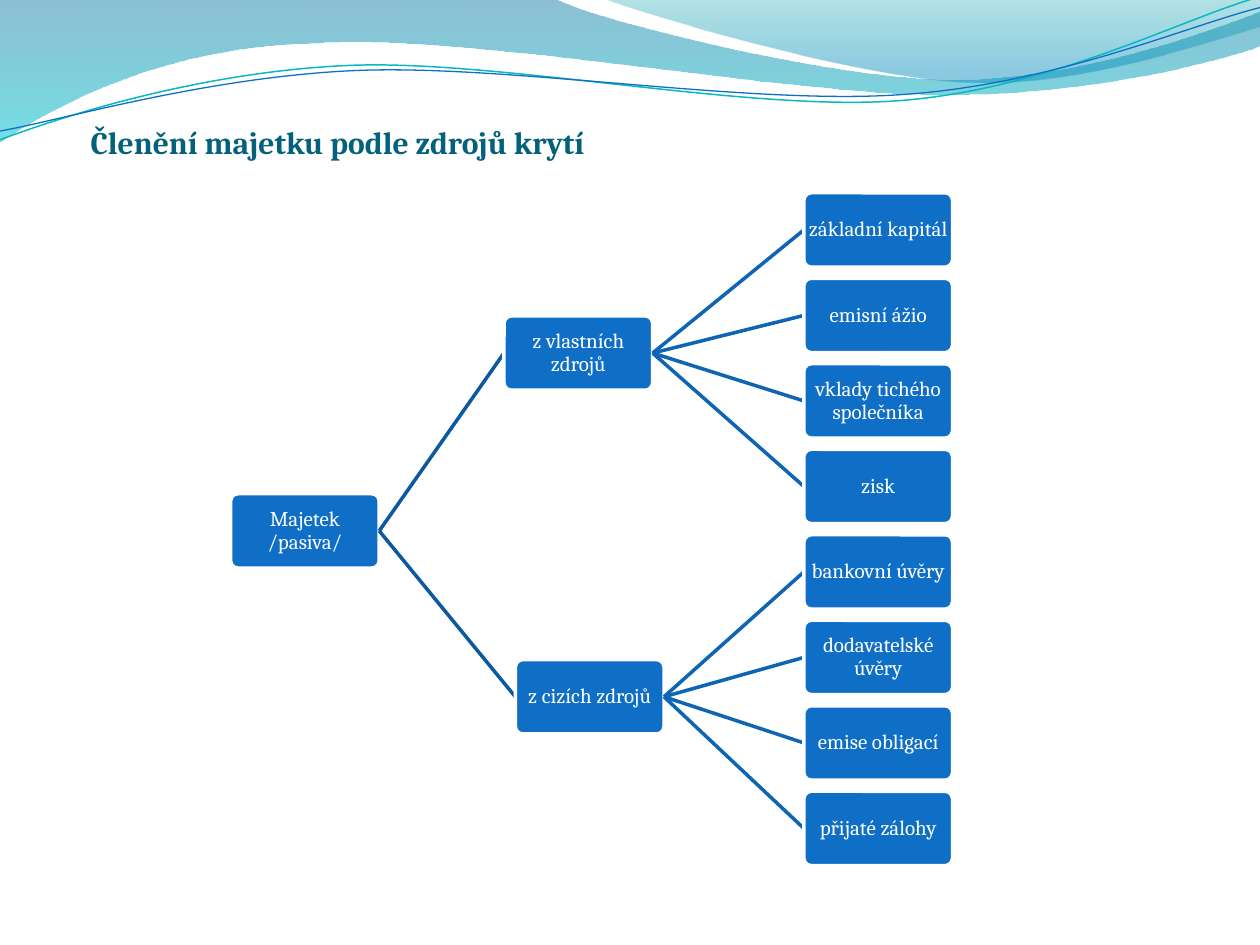
from pptx import Presentation
from pptx.dml.color import RGBColor
from pptx.enum.shapes import MSO_CONNECTOR, MSO_SHAPE
from pptx.enum.text import MSO_ANCHOR, PP_ALIGN
from pptx.oxml.ns import qn
from pptx.util import Inches, Pt
from lxml import etree

ROUND = MSO_SHAPE.ROUNDED_RECTANGLE
LINE = MSO_CONNECTOR.STRAIGHT
LEFT, MID = PP_ALIGN.LEFT, PP_ALIGN.CENTER

WHITE = RGBColor(0xFF, 0xFF, 0xFF)
BLUE = RGBColor(0x0F, 0x6F, 0xC6)
DEEP = RGBColor(0x0C, 0x59, 0x9F)
NAVY = RGBColor(0x0E, 0x65, 0xB4)
TITLE = RGBColor(0x04, 0x61, 0x7B)
AQUA = RGBColor(0x0A, 0xB8, 0xBF)
STEEL = RGBColor(0x00, 0x74, 0xA1)
CYAN = RGBColor(0x00, 0xC6, 0xCF)
TEAL = RGBColor(0x00, 0xA1, 0xA9)
SKY = RGBColor(0x00, 0x8B, 0xBF)

TOP, LAST = 1.53, 6.28  # tops of the first and the last row of the tree
ROW = (LAST - TOP) / 7
WIDE, HIGH = 1.18, 0.59

prs = Presentation()
prs.slide_width, prs.slide_height = Inches(10), Inches(7.5)
slide = prs.slides.add_slide(prs.slide_layouts[6])
shapes = slide.shapes


def write(frame, text, size=12, color=WHITE, bold=False, align=MID, space=0.9):
    para = frame.paragraphs[0]
    para.alignment, para.line_spacing = align, space
    run = para.add_run()
    run.text = text
    font = run.font
    font.name, font.size, font.bold = "Cambria", Pt(size), bold
    font.color.rgb = color


def trace(start, parts, close):
    """Draw an outline; a part is a line end (x, y) or a cubic curve (six numbers)."""
    pen = shapes.build_freeform(Inches(start[0]), Inches(start[1]))
    for part in parts:
        dots = zip(part[::2], part[1::2])
        pen.add_line_segments([(Inches(x), Inches(y)) for x, y in dots], close=False)
    if close:
        pen.add_line_segments([], close=True)
    shape = pen.convert_to_shape()
    shape.shadow.inherit = False
    # Merge the three points of each curve into one cubic segment
    legs = iter(list(shape.element.iter(qn("a:lnTo"))))
    for part in parts:
        first = next(legs)
        if len(part) == 6:
            curve = etree.Element(qn("a:cubicBezTo"))
            first.addprevious(curve)
            for leg in (first, next(legs), next(legs)):
                curve.append(leg[0])
                leg.getparent().remove(leg)
    return shape


# Header bands: start, parts, gradient stops (place, colour, opacity)
bands = [
    ((0, 0), [(4.4, -0.01), (4.76, 0.17, 6.64, 0.63, 7.58, 0.63),
              (8.53, 0.63, 9.58, 0.26, 10, 0.09), (10.01, 0.36),
              (9.83, 0.44, 8.7, 0.76, 7.46, 0.75),
              (6.22, 0.75, 3.82, 0.28, 2.57, 0.34),
              (1.29, 0.36, 0.46, 0.83, -0.01, 1.13)],
     [(0, STEEL, 45), (1, CYAN, 55)]),
    ((4.79, -0.01), [(5.09, 0.11, 6.82, 0.62, 7.69, 0.65),
                     (8.56, 0.69, 9.61, 0.32, 10, 0.21), (10, 0)],
     [(0, TEAL, 30), (0.8, SKY, 45)]),
]
for start, parts, stops in bands:
    band = trace(start, parts, True)
    band.line.fill.background()
    band.fill.gradient()
    band.fill.gradient_angle = 270
    for stop, (place, color, _) in zip(band.fill.gradient_stops, stops):
        stop.position, stop.color.rgb = place, color
    for tint, (_, _, share) in zip(band.element.iter(qn("a:srgbClr")), stops):
        etree.SubElement(tint, qn("a:alpha")).set("val", str(share * 1000))

# Header waves: start, curves, colour, line width
waves = [
    ((0, 1.11), [(0.48, 0.93, 1.58, 0.57, 2.77, 0.52),
                 (3.95, 0.47, 5.93, 0.89, 7.13, 0.8),
                 (8.33, 0.71, 9.38, 0.15, 9.98, -0.02)], AQUA, 0.85),
    ((0, 1.04), [(0.47, 0.96, 1.64, 0.61, 2.83, 0.56),
                 (4.03, 0.51, 5.97, 0.84, 7.17, 0.75),
                 (8.36, 0.67, 9.41, 0.21, 10, 0.06)], BLUE, 0.75),
]
for start, parts, color, width in waves:
    wave = trace(start, parts, False)
    wave.fill.background()
    wave.line.color.rgb, wave.line.width = color, Pt(width)

title = shapes.add_textbox(Inches(0.62), Inches(0.93), Inches(4.38), Inches(0.4))
title.text_frame.word_wrap = False
write(title.text_frame, "Členění majetku podle zdrojů krytí",
      size=18, color=TITLE, bold=True, align=LEFT, space=1)

# Tree: left edge, row, text, parent
nodes = [
    (1.83, 3.52, "Majetek /pasiva/", None),
    (4, 1.44, "z vlastních zdrojů", 0),
    (4.09, 5.46, "z cizích zdrojů", 0),
]
leaves = ["základní kapitál", "emisní ážio", "vklady tichého společníka", "zisk",
          "bankovní úvěry", "dodavatelské úvěry", "emise obligací", "přijaté zálohy"]
nodes += [(6.38, row, text, 1 + row // 4) for row, text in enumerate(leaves)]

for left, row, text, up in nodes:
    top = TOP + ROW * row
    if up is not None:
        x, y = nodes[up][0] + WIDE, TOP + ROW * nodes[up][1] + HIGH / 2
        link = shapes.add_connector(LINE, Inches(x), Inches(y),
                                    Inches(left), Inches(top + HIGH / 2))
        link.line.color.rgb, link.line.width = (NAVY if up else DEEP), Pt(2)
        etree.SubElement(link.element.spPr, qn("a:effectLst"))
    box = shapes.add_shape(ROUND, Inches(left), Inches(top), Inches(WIDE), Inches(HIGH))
    box.shadow.inherit = False
    box.adjustments[0] = 0.1
    box.fill.solid()
    box.fill.fore_color.rgb = BLUE
    box.line.color.rgb, box.line.width = WHITE, Pt(2)
    frame = box.text_frame
    frame.word_wrap, frame.vertical_anchor = True, MSO_ANCHOR.MIDDLE
    frame.margin_left = frame.margin_right = Inches(0.01)
    frame.margin_top = frame.margin_bottom = Inches(0.01)
    write(frame, text)

prs.save("out.pptx")
